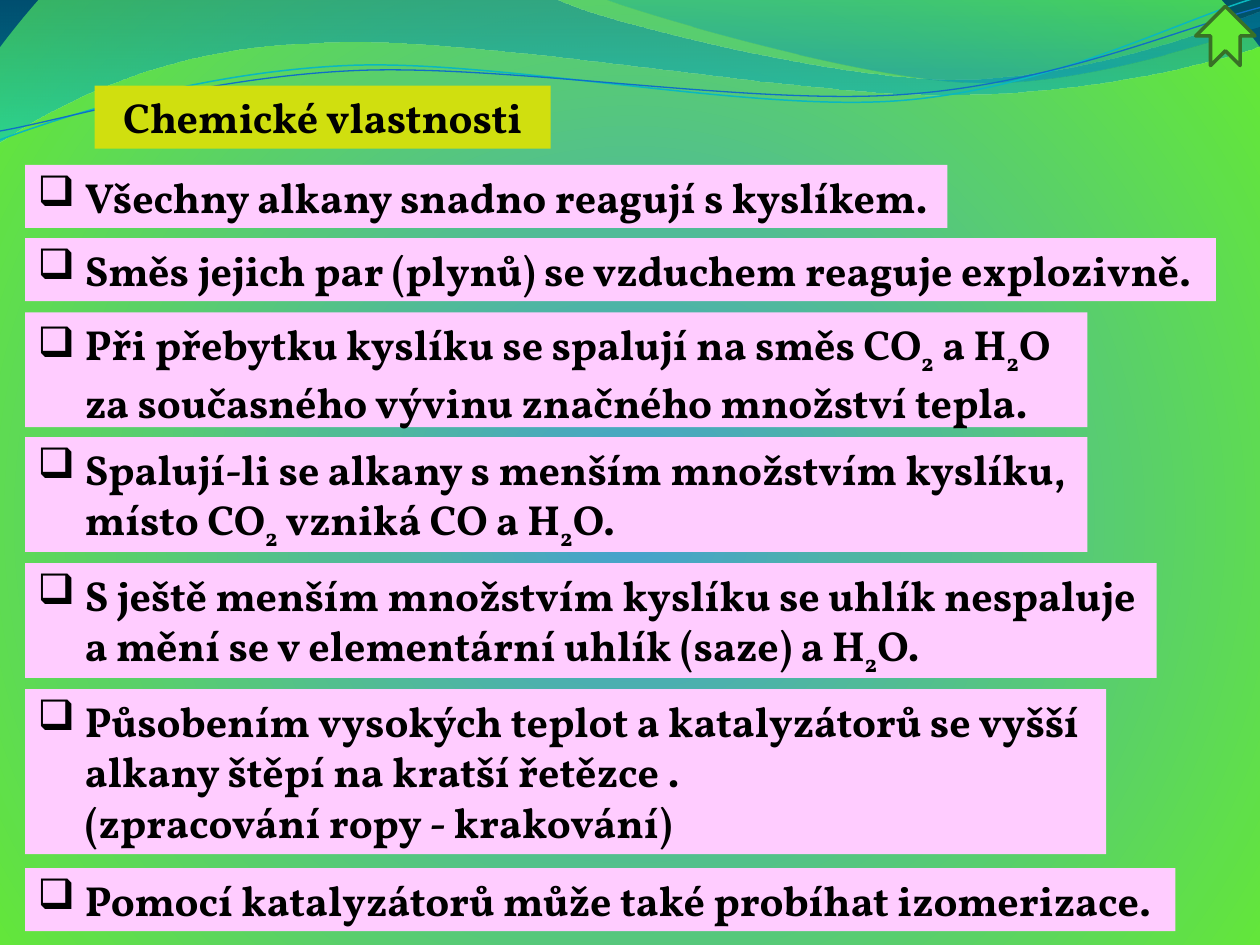
"""Build the slide on the chemical properties of alkanes."""
import lxml.etree
import pptx
import pptx.dml.color
import pptx.enum.shapes
import pptx.enum.text
import pptx.oxml
import pptx.oxml.ns
import pptx.util

Inches = pptx.util.Inches
Pt = pptx.util.Pt
SHAPES = pptx.enum.shapes.MSO_SHAPE
qn = pptx.oxml.ns.qn

COLORS = {
    "center": "45A0D0", "green": "64E935", "corner": "003048",
    "deep": "0074A1", "aqua": "00C6CF", "teal": "00A1A9", "sea": "008BBF",
    "cyan": "0AB8BF", "blue": "0F6FC6", "heading": "D0DF0F",
    "fact": "FFCCFF", "text": "000000", "arrow_edge": "387026",
}
RGB = {name: pptx.dml.color.RGBColor.from_string(code) for name, code in COLORS.items()}


def set_gradient(fill, properties, stops, direction):
    """Give the fill its stops of (percent, colour, opacity) and its direction."""
    fill.gradient()
    gradient = properties.find(qn("a:gradFill"))
    for child in list(gradient):
        gradient.remove(child)
    stop_list = lxml.etree.SubElement(gradient, qn("a:gsLst"))
    for percent, color, opacity in stops:
        stop = lxml.etree.SubElement(stop_list, qn("a:gs"), pos=str(percent * 1000))
        tone = lxml.etree.SubElement(stop, qn("a:srgbClr"), val=COLORS[color])
        if opacity < 100:
            lxml.etree.SubElement(tone, qn("a:alpha"), val=str(opacity * 1000))
    gradient.append(pptx.oxml.parse_xml(direction))


def add_text_box(text, left, top, width, height, color, bullet=None, align=None):
    """Add a filled box; ~ toggles subscript and a newline breaks the line."""
    box = slide.shapes.add_shape(
        SHAPES.RECTANGLE, Inches(left), Inches(top), Inches(width), Inches(height))
    box.shadow.inherit = False
    box.fill.solid()
    box.fill.fore_color.rgb = RGB[color]
    box.line.fill.background()
    frame = box.text_frame
    frame.word_wrap = True
    frame.auto_size = pptx.enum.text.MSO_AUTO_SIZE.SHAPE_TO_FIT_TEXT
    frame.vertical_anchor = pptx.enum.text.MSO_ANCHOR.TOP
    paragraph = frame.paragraphs[0]
    paragraph.alignment = align or pptx.enum.text.PP_ALIGN.LEFT
    if bullet:
        layout = paragraph._p.get_or_add_pPr()
        layout.set("marL", str(Inches(3 / 8)))
        layout.set("indent", str(-Inches(3 / 8)))
        lxml.etree.SubElement(layout, qn("a:buFont"), typeface="Wingdings", charset="2")
        lxml.etree.SubElement(layout, qn("a:buChar"), char=bullet)
    for index, part in enumerate(text.split("~")):
        for line_index, line in enumerate(part.split("\n")):
            if line_index:
                paragraph.add_line_break()
            run = paragraph.add_run()
            run.text = line
            run.font.size = Pt(24)
            run.font.name = "Vollkorn"
            run.font.bold = True
            run.font.color.rgb = RGB["text"]
            if index % 2:
                run._r.get_or_add_rPr().set("baseline", "-25000")


deck = pptx.Presentation()
deck.slide_width = Inches(10)
deck.slide_height = Inches(7.5)
slide = deck.slides.add_slide(deck.slide_layouts[6])

NAMESPACE = 'xmlns:a="http://schemas.openxmlformats.org/drawingml/2006/main"'
DOWNWARD = f'<a:lin {NAMESPACE} ang="5400000" scaled="1"/>'
CIRCLE = (f'<a:path {NAMESPACE} path="circle">'
          '<a:fillToRect l="10000" t="110000" r="10000" b="100000"/></a:path>')

backdrop = slide.background.fill
set_gradient(backdrop, slide._element.cSld.bg.bgPr,
             [(0, "center", 100), (100, "green", 100), (100, "corner", 100)], CIRCLE)

waves = [
    ([(0, 0), (4.4, -0.01), (4.76, 0.17, 6.64, 0.63, 7.58, 0.63),
      (8.53, 0.63, 9.58, 0.26, 10, 0.09), (10.01, 0.36),
      (9.83, 0.44, 8.7, 0.76, 7.46, 0.75), (6.22, 0.75, 3.82, 0.28, 2.57, 0.34),
      (1.29, 0.36, 0.46, 0.83, -0.01, 1.13), (0, 0)],
     [(0, "deep", 45), (100, "aqua", 55)], None, 0),
    ([(4.79, -0.01), (5.09, 0.11, 6.82, 0.62, 7.69, 0.65),
      (8.56, 0.69, 9.61, 0.32, 10, 0.21), (10, 0), (4.79, -0.01)],
     [(0, "teal", 30), (80, "sea", 45)], None, 0),
    ([(0, 1.11), (0.48, 0.93, 1.58, 0.57, 2.77, 0.52),
      (3.95, 0.47, 5.93, 0.89, 7.13, 0.8), (8.33, 0.71, 9.38, 0.15, 9.98, -0.02)],
     None, "cyan", 0.85),
    ([(0, 1.04), (0.47, 0.96, 1.64, 0.61, 2.83, 0.56),
      (4.03, 0.51, 5.97, 0.84, 7.17, 0.75), (8.36, 0.67, 9.41, 0.21, 10, 0.06)],
     None, "blue", 0.75),
]
for segments, stops, line_color, line_width in waves:
    points = [(Inches(segment[i]), Inches(segment[i + 1]))
              for segment in segments for i in range(0, len(segment), 2)]
    outline = slide.shapes.build_freeform(*points[0])
    outline.add_line_segments(points[1:], close=stops is not None)
    wave = outline.convert_to_shape()
    vertices = iter(wave._element.findall(".//" + qn("a:lnTo")))
    for segment in segments[1:]:
        start = next(vertices)
        if len(segment) == 6:
            start.tag = qn("a:cubicBezTo")
            for _ in range(2):
                vertex = next(vertices)
                start.append(vertex[0])
                vertex.getparent().remove(vertex)
    wave.shadow.inherit = False
    if stops:
        set_gradient(wave.fill, wave._element.spPr, stops, DOWNWARD)
        wave.line.fill.background()
    else:
        wave.fill.background()
        wave.line.color.rgb = RGB[line_color]
        wave.line.width = Pt(line_width)

add_text_box("Chemické vlastnosti", 0.75, 0.68, 3.62, 0.5, "heading",
             align=pptx.enum.text.PP_ALIGN.CENTER)

line_heights = {1: 0.5, 2: 0.91, 3: 1.31}
facts = [
    (1.31, 7.32, 1, "Všechny alkany snadno reagují s kyslíkem."),
    (1.89, 9.45, 1, "Směs jejich par (plynů) se vzduchem reaguje explozivně."),
    (2.48, 8.43, 2, "Při přebytku kyslíku se spalují na směs CO~2~ a H~2~O\n"
                    "za současného vývinu značného množství tepla."),
    (3.47, 8.43, 2, "Spalují-li se alkany s menším množstvím kyslíku,\n"
                    "místo CO~2~ vzniká CO a H~2~O."),
    (4.47, 8.98, 2, "S ještě menším množstvím kyslíku se uhlík nespaluje "
                    "a mění se v elementární uhlík (saze) a H~2~O."),
    (5.47, 8.58, 3, "Působením vysokých teplot a katalyzátorů se vyšší "
                    "alkany štěpí na kratší řetězce .\n(zpracování ropy - krakování)"),
    (6.89, 9.13, 1, "Pomocí katalyzátorů může také probíhat izomerizace."),
]
for top, width, lines, fact in facts:
    add_text_box(fact, 0.2, top, width, line_heights[lines], "fact", bullet="q")

up_arrow = slide.shapes.add_shape(
    SHAPES.NOTCHED_RIGHT_ARROW, Inches(9.49), Inches(0.05), Inches(0.47), Inches(0.47))
up_arrow.rotation = 270
up_arrow.shadow.inherit = False
up_arrow.fill.solid()
up_arrow.fill.fore_color.rgb = RGB["green"]
up_arrow.line.color.rgb = RGB["arrow_edge"]
up_arrow.line.width = Pt(2)

deck.save("out.pptx")
